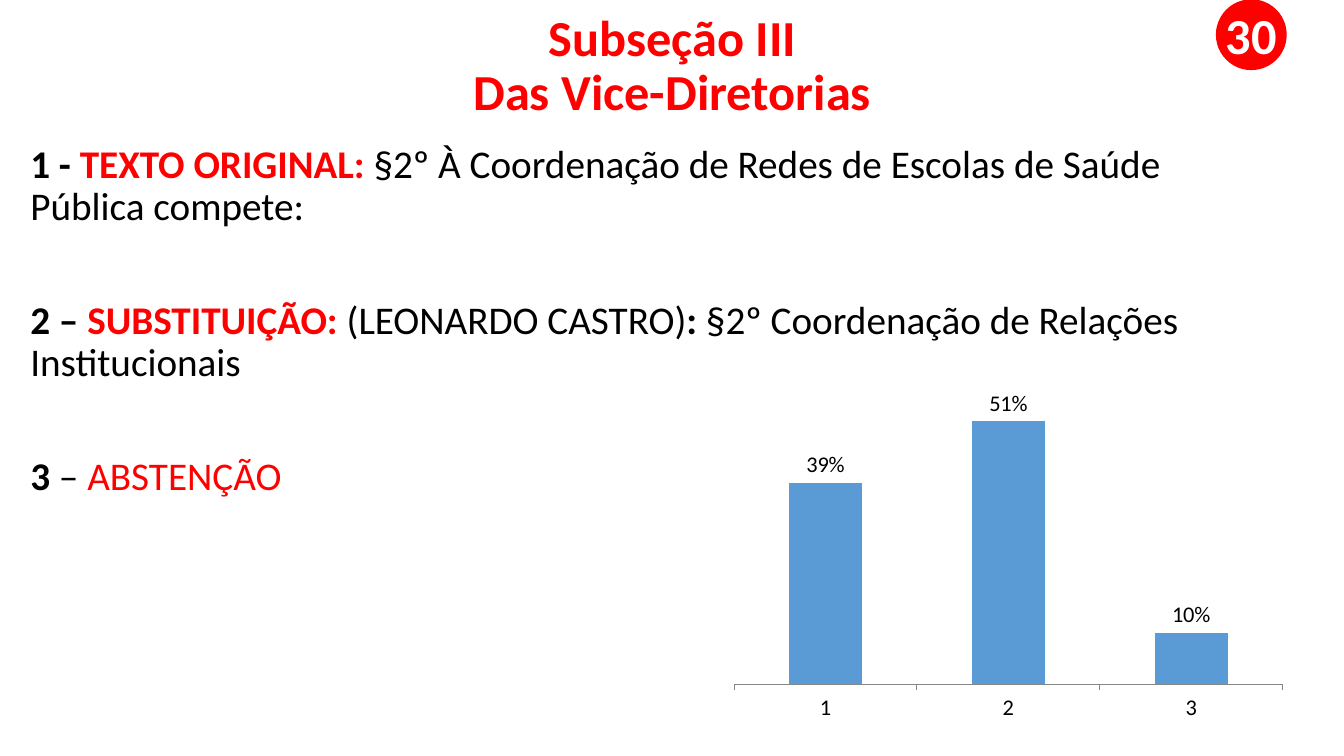
from dataclasses import dataclass

from lxml import etree
from pptx import Presentation
from pptx.chart.data import CategoryChartData
from pptx.dml.color import RGBColor
from pptx.enum.chart import XL_CHART_TYPE, XL_LABEL_POSITION, XL_TICK_LABEL_POSITION, XL_TICK_MARK
from pptx.enum.shapes import MSO_SHAPE
from pptx.enum.text import MSO_ANCHOR, MSO_AUTO_SIZE, PP_ALIGN
from pptx.oxml.ns import qn
from pptx.util import Cm, Pt

COLUMNS = XL_CHART_TYPE.COLUMN_CLUSTERED
OUTSIDE_END = XL_LABEL_POSITION.OUTSIDE_END
LABELS_LOW = XL_TICK_LABEL_POSITION.LOW
TICK_OUT = XL_TICK_MARK.OUTSIDE
ELLIPSE = MSO_SHAPE.OVAL
TOP, MIDDLE = MSO_ANCHOR.TOP, MSO_ANCHOR.MIDDLE
NO_AUTOFIT = MSO_AUTO_SIZE.NONE
LEFT, CENTER = PP_ALIGN.LEFT, PP_ALIGN.CENTER

FONT = "Calibri"
RED, BLACK, WHITE, BLUE, GRAY = "FF0000", "000000", "FFFFFF", "5B9BD5", "868686"


@dataclass(frozen=True)
class Span:
    text: str
    color: str = BLACK
    bold: bool = False


@dataclass(frozen=True)
class Option:
    spans: tuple[Span, ...]
    gap: float


OPTIONS = (
    Option((Span("1 - ", bold=True), Span("TEXTO ORIGINAL: ", RED, True),
            Span("§2º À Coordenação de Redes de Escolas de Saúde Pública compete:")), 10),
    Option((Span("2 – ", bold=True), Span("SUBSTITUIÇÃO: ", RED, True),
            Span("(LEONARDO CASTRO)"), Span(":", bold=True),
            Span(" §2º Coordenação de Relações Institucionais")), 51),
    Option((Span("3", bold=True), Span(" – "), Span("ABSTENÇÃO", RED)), 51),
)
VOTES = {"1": 0.39, "2": 0.51, "3": 0.10}


def rgb(color: str) -> RGBColor:
    return RGBColor.from_string(color)


def place(shape, left: float, top: float, width: float, height: float) -> None:
    shape.left, shape.top = Cm(left), Cm(top)
    shape.width, shape.height = Cm(width), Cm(height)


def write(paragraph, spans, *, size: float, align=LEFT, spacing: float = 1.0,
          before: float = 0) -> None:
    paragraph.alignment = align
    paragraph.line_spacing = spacing
    paragraph.space_before = Pt(before)
    for span in spans:
        for number, line in enumerate(span.text.split("\n")):
            if number:
                paragraph.add_line_break()
            run = paragraph.add_run()
            run.text = line
            run.font.name, run.font.size = FONT, Pt(size)
            run.font.bold = span.bold
            run.font.color.rgb = rgb(span.color)


def remove_bullet(paragraph) -> None:
    properties = paragraph._p.get_or_add_pPr()
    properties.set("marL", "0")
    properties.set("indent", "0")
    etree.SubElement(properties, qn("a:buNone"))


def add_heading(slide) -> None:
    heading = slide.shapes.title
    place(heading, 2.34, -0.15, 29.21, 3.68)
    frame = heading.text_frame
    frame.auto_size, frame.vertical_anchor = NO_AUTOFIT, MIDDLE
    write(frame.paragraphs[0], [Span("Subseção III\nDas Vice-Diretorias", RED, True)],
          size=36, align=CENTER, spacing=0.9)


def add_options(slide) -> None:
    proposals = slide.placeholders[1]
    place(proposals, 0.51, 3.51, 31.04, 13.89)
    frame = proposals.text_frame
    frame.auto_size, frame.vertical_anchor = NO_AUTOFIT, TOP
    for number, option in enumerate(OPTIONS):
        paragraph = frame.add_paragraph() if number else frame.paragraphs[0]
        write(paragraph, option.spans, size=28, spacing=0.9, before=option.gap)
        remove_bullet(paragraph)


def add_votes(slide) -> None:
    data = CategoryChartData(number_format="0%")
    data.categories = list(VOTES)
    data.add_series("Series 1", list(VOTES.values()))
    votes = slide.shapes.add_chart(COLUMNS, Cm(18.21), Cm(9.27), Cm(14.4), Cm(9.09), data).chart
    votes.has_legend = votes.has_title = False
    votes.font.name, votes.font.size = FONT, Pt(16)
    votes.font.color.rgb = rgb(BLACK)

    # Axes
    shares = votes.value_axis
    shares.visible = shares.has_major_gridlines = False
    shares.minimum_scale, shares.maximum_scale = 0, 0.6
    choices = votes.category_axis
    choices.major_tick_mark = TICK_OUT
    choices.tick_label_position = LABELS_LOW
    choices.format.line.color.rgb = rgb(GRAY)
    choices.format.line.width = Pt(0.75)

    # Columns and their labels
    columns = votes.plots[0]
    columns.gap_width, columns.vary_by_categories = 150, False
    fill = columns.series[0].format.fill
    fill.solid()
    fill.fore_color.rgb = rgb(BLUE)
    columns.has_data_labels = True
    labels = columns.data_labels
    labels.show_value, labels.position = True, OUTSIDE_END
    labels.number_format, labels.number_format_is_linked = "0%", False


def add_counter(slide) -> None:
    counter = slide.shapes.add_shape(ELLIPSE, Cm(30.66), Cm(0), Cm(1.75), Cm(1.75))
    counter.shadow.inherit = False
    counter.fill.solid()
    counter.fill.fore_color.rgb = rgb(RED)
    counter.line.color.rgb = rgb(RED)
    counter.line.width = Pt(1)
    frame = counter.text_frame
    frame.word_wrap, frame.vertical_anchor = False, MIDDLE
    frame.margin_left = frame.margin_right = frame.margin_top = frame.margin_bottom = 0
    write(frame.paragraphs[0], [Span("30", WHITE, True)], size=36, align=CENTER)


def main() -> None:
    deck = Presentation()
    deck.slide_width, deck.slide_height = Cm(33.87), Cm(19.05)
    slide = deck.slides.add_slide(deck.slide_layouts[1])
    add_heading(slide)
    add_options(slide)
    add_votes(slide)
    add_counter(slide)
    deck.save("out.pptx")


if __name__ == "__main__":
    main()
